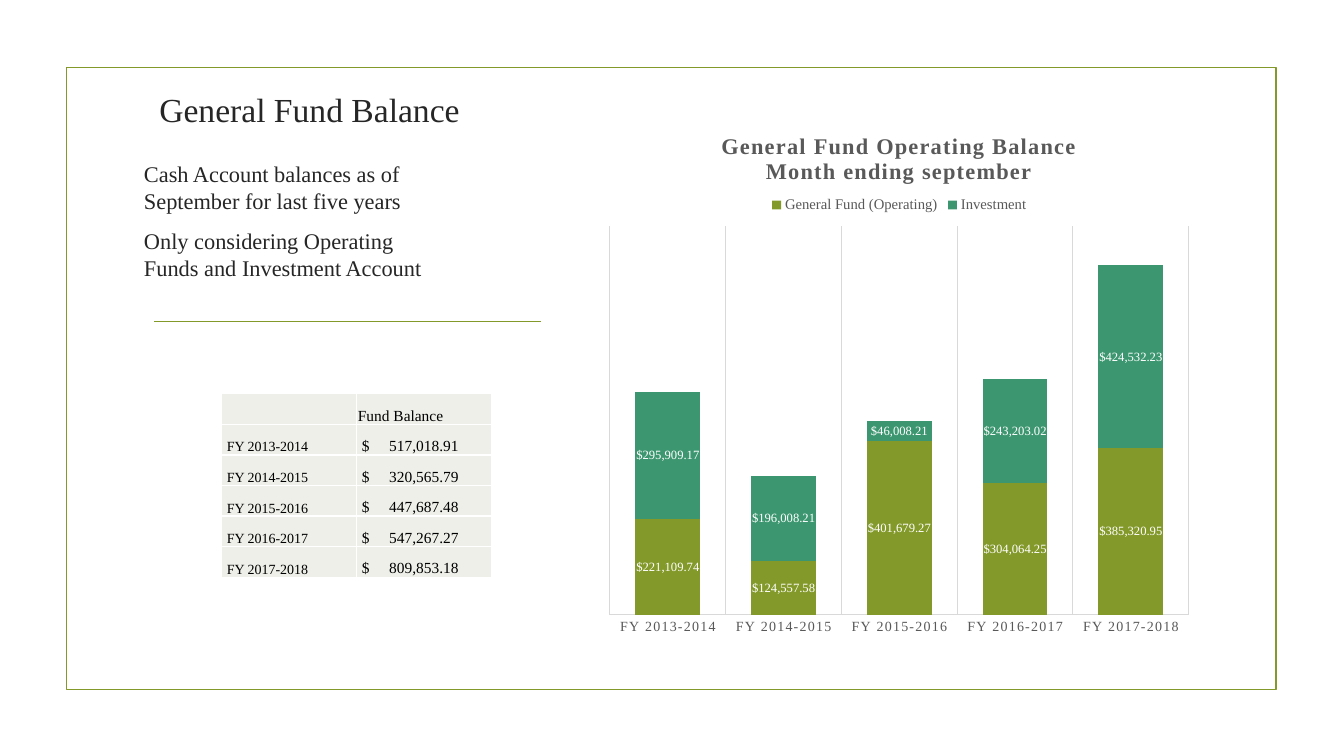
"""Build the General Fund Balance slide with its table and stacked column chart."""
from dataclasses import dataclass

from lxml import etree
from pptx import Presentation
from pptx.chart.data import CategoryChartData
from pptx.dml.color import RGBColor
from pptx.enum import chart as charts, shapes, text
from pptx.oxml import ns, parse_xml
from pptx.util import Inches, Pt

TITLE = "General Fund Balance"
NOTES = [
    "Cash Account balances as of September for last five years",
    "Only considering Operating Funds and Investment Account",
]
TABLE_HEADING = "Fund Balance"
YEARS = ["FY 2013-2014", "FY 2014-2015", "FY 2015-2016", "FY 2016-2017", "FY 2017-2018"]
BALANCES = ["517,018.91", "320,565.79", "447,687.48", "547,267.27", "809,853.18"]
CHART_TITLE = "General Fund Operating Balance\nMonth ending september"
SERIES = {
    "General Fund (Operating)": [221109.74, 124557.58, 401679.27, 304064.25, 385320.95],
    "Investment": [295909.17, 196008.21, 46008.21, 243203.02, 424532.23],
}
CHART_LAYOUT = {
    "c:title": {"x": 0.2, "y": 0.04},
    "c:legend": {"x": 0.28, "y": 0.16, "w": 0.44, "h": 0.04},
    "c:plotArea": {"x": 0.02, "y": 0.22, "w": 0.96, "h": 0.72},
}


@dataclass(frozen=True)
class Theme:
    font: str = "Times New Roman"
    ink: str = "262626"
    black: str = "000000"
    white: str = "FFFFFF"
    gray: str = "595959"
    grid: str = "D9D9D9"
    olive: str = "83992A"
    green: str = "3C9770"
    cell: str = "EDEFE8"
    title: float = 24
    body: float = 16
    amount: float = 11
    year: float = 10
    legend: float = 10.5
    label: float = 9
    rule: float = 1.25


THEME = Theme()


def rgb(color):
    return RGBColor.from_string(color)


def style_font(font, size, color, bold=False):
    font.name, font.size, font.bold = THEME.font, Pt(size), bold
    font.color.rgb = rgb(color)


def style_line(line, color, width):
    line.color.rgb = rgb(color)
    line.width = Pt(width)


def style_paragraph(paragraph, size, color):
    for run in paragraph.runs:
        style_font(run.font, size, color)


def add_frame(slide):
    frame = slide.shapes.add_shape(
        shapes.MSO_SHAPE.RECTANGLE, Inches(0.66), Inches(0.67), Inches(12), Inches(6.17))
    frame.shadow.inherit = False
    frame.fill.background()
    style_line(frame.line, THEME.olive, THEME.rule)
    rule = slide.shapes.add_connector(
        shapes.MSO_CONNECTOR.STRAIGHT, Inches(1.53), Inches(3.19), Inches(5.37), Inches(3.19))
    style_line(rule.line, THEME.olive, THEME.rule)
    etree.SubElement(rule.element.spPr, ns.qn("a:effectLst"))


def add_title(slide):
    title = slide.shapes.title
    title.left, title.top = Inches(0.92), Inches(0.5)
    title.width, title.height = Inches(4.3), Inches(0.83)
    title.text_frame.text = TITLE
    title.text_frame.vertical_anchor = text.MSO_ANCHOR.BOTTOM
    paragraph = title.text_frame.paragraphs[0]
    paragraph.alignment = text.PP_ALIGN.CENTER
    style_paragraph(paragraph, THEME.title, THEME.ink)


def add_notes(slide):
    box = slide.shapes.add_textbox(Inches(1.33), Inches(1.54), Inches(3.23), Inches(1.6))
    frame = box.text_frame
    frame.word_wrap = True
    frame.text = "\n".join(NOTES)
    for index, paragraph in enumerate(frame.paragraphs):
        paragraph.space_before = Pt(3.2 if index else 0)
        paragraph.space_after = Pt(6)
        style_paragraph(paragraph, THEME.body, THEME.ink)


def fill_cell(cell, content, size, inset):
    cell.margin_left = Inches(inset)
    cell.margin_right = cell.margin_top = Inches(0.01)
    cell.margin_bottom = 0
    cell.vertical_anchor = text.MSO_ANCHOR.BOTTOM
    properties = cell._tc.get_or_add_tcPr()
    for side in ("lnL", "lnR", "lnT", "lnB"):
        properties.append(parse_xml(
            f'<a:{side} {ns.nsdecls("a")} w="{Pt(1)}"><a:solidFill>'
            f'<a:srgbClr val="{THEME.white}"/></a:solidFill></a:{side}>'))
    cell.fill.solid()
    cell.fill.fore_color.rgb = rgb(THEME.cell)
    cell.text = content
    paragraph = cell.text_frame.paragraphs[0]
    if "\t" in content:
        tabs = etree.SubElement(paragraph._p.get_or_add_pPr(), ns.qn("a:tabLst"))
        etree.SubElement(tabs, ns.qn("a:tab"), pos=str(Inches(0.96)), algn="r")
    style_paragraph(paragraph, size, THEME.black)


def add_balance_table(slide):
    rows = [("", TABLE_HEADING)]
    rows += [(year, f"$\t{balance}") for year, balance in zip(YEARS, BALANCES)]
    table = slide.shapes.add_table(
        len(rows), 2, Inches(2.2), Inches(3.9), Inches(2.68), Inches(1.82)).table
    table.first_row = table.horz_banding = False
    for row, (year, balance) in enumerate(rows):
        fill_cell(table.cell(row, 0), year, THEME.year, 0.05)
        fill_cell(table.cell(row, 1), balance, THEME.amount, 0.05 if row else 0.01)


def place_chart_part(chart, tag, place):
    part = next(chart.element.iter(ns.qn(tag)))
    for old in part.findall(ns.qn("c:layout")):
        part.remove(old)
    layout = etree.Element(ns.qn("c:layout"))
    manual = etree.SubElement(layout, ns.qn("c:manualLayout"))
    if tag == "c:plotArea":
        etree.SubElement(manual, ns.qn("c:layoutTarget"), val="inner")
    for key in ("x", "y"):
        etree.SubElement(manual, ns.qn(f"c:{key}Mode"), val="edge")
    for key, value in place.items():
        etree.SubElement(manual, ns.qn(f"c:{key}"), val=str(value))
    overlay = part.find(ns.qn("c:overlay"))
    part.insert(0 if overlay is None else part.index(overlay), layout)


def add_balance_chart(slide):
    data = CategoryChartData()
    data.categories = YEARS
    for name, values in SERIES.items():
        data.add_series(name, values)
    chart = slide.shapes.add_chart(
        charts.XL_CHART_TYPE.COLUMN_STACKED,
        Inches(5.93), Inches(1.07), Inches(5.98), Inches(5.35), data).chart
    style_font(chart.font, THEME.year, THEME.black)

    chart.chart_title.include_in_layout = False
    chart.chart_title.text_frame.text = CHART_TITLE
    for paragraph in chart.chart_title.text_frame.paragraphs:
        for run in paragraph.runs:
            style_font(run.font, THEME.body, THEME.gray, bold=True)
            run.font._element.set("spc", "100")

    chart.has_legend = True
    chart.legend.position = charts.XL_LEGEND_POSITION.TOP
    chart.legend.include_in_layout = False
    style_font(chart.legend.font, THEME.legend, THEME.gray)

    years = chart.category_axis
    years.major_tick_mark = charts.XL_TICK_MARK.NONE
    style_font(years.tick_labels.font, THEME.year, THEME.gray)
    years.tick_labels.font._element.set("spc", "100")
    for line in (years.format.line, years.major_gridlines.format.line):
        style_line(line, THEME.grid, 0.75)
    amounts = chart.value_axis
    amounts.minimum_scale, amounts.maximum_scale = 0, 900000
    amounts.has_major_gridlines = False
    amounts.visible = False

    plot = chart.plots[0]
    plot.gap_width, plot.overlap, plot.vary_by_categories = 79, 100, False
    for series, color in zip(plot.series, (THEME.olive, THEME.green)):
        series.format.fill.solid()
        series.format.fill.fore_color.rgb = rgb(color)
        labels = series.data_labels
        labels.show_value = True
        labels.position = charts.XL_LABEL_POSITION.CENTER
        labels.number_format, labels.number_format_is_linked = '"$"#,##0.00', False
        style_font(labels.font, THEME.label, THEME.white)
    for tag, place in CHART_LAYOUT.items():
        place_chart_part(chart, tag, place)


def main():
    presentation = Presentation()
    presentation.slide_width, presentation.slide_height = Inches(13.33), Inches(7.5)
    slide = presentation.slides.add_slide(presentation.slide_layouts[5])
    for add_part in (add_frame, add_title, add_notes, add_balance_chart, add_balance_table):
        add_part(slide)
    presentation.save("out.pptx")


if __name__ == "__main__":
    main()
